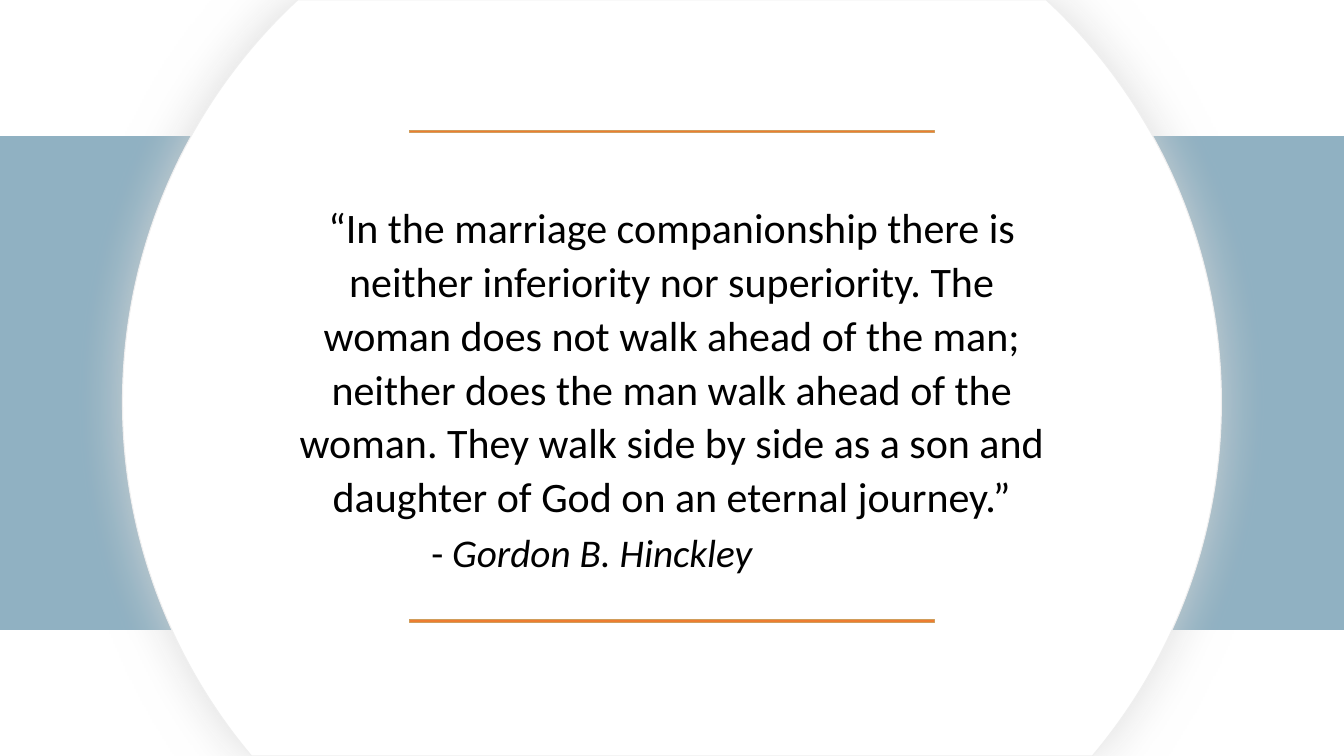
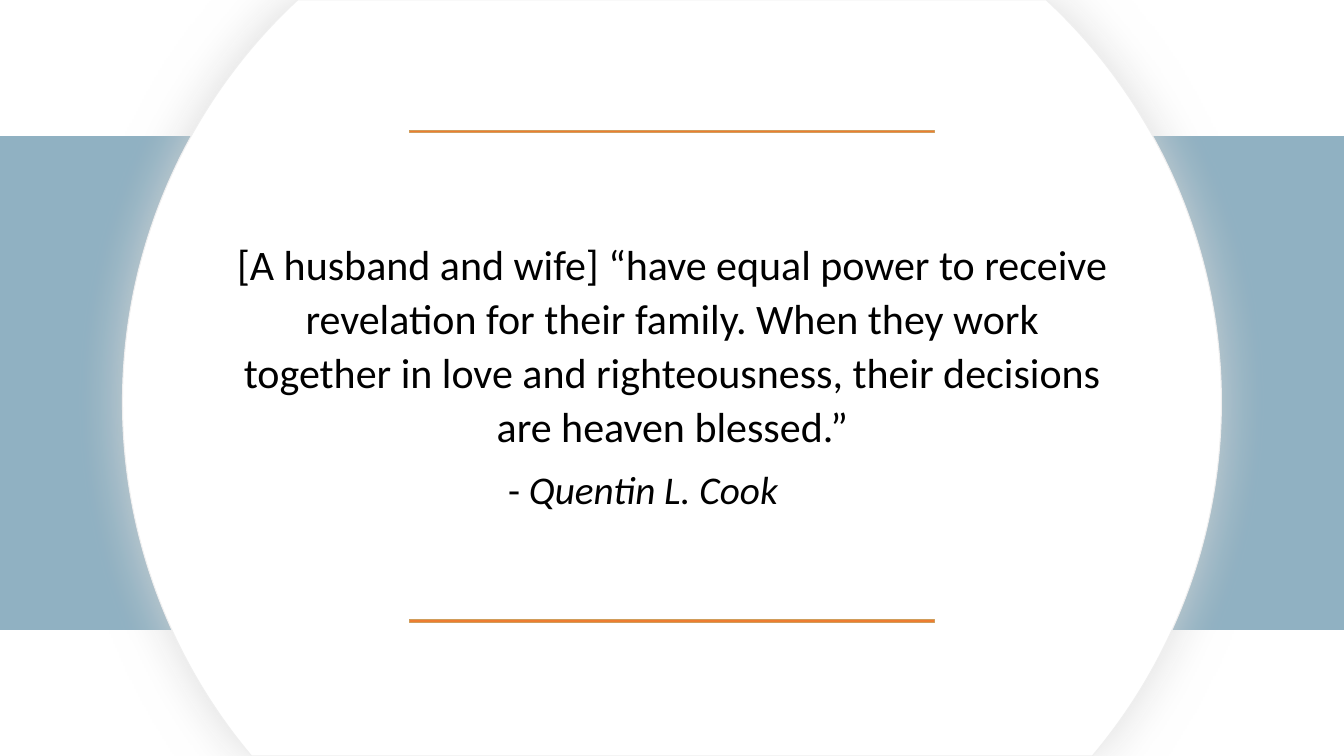
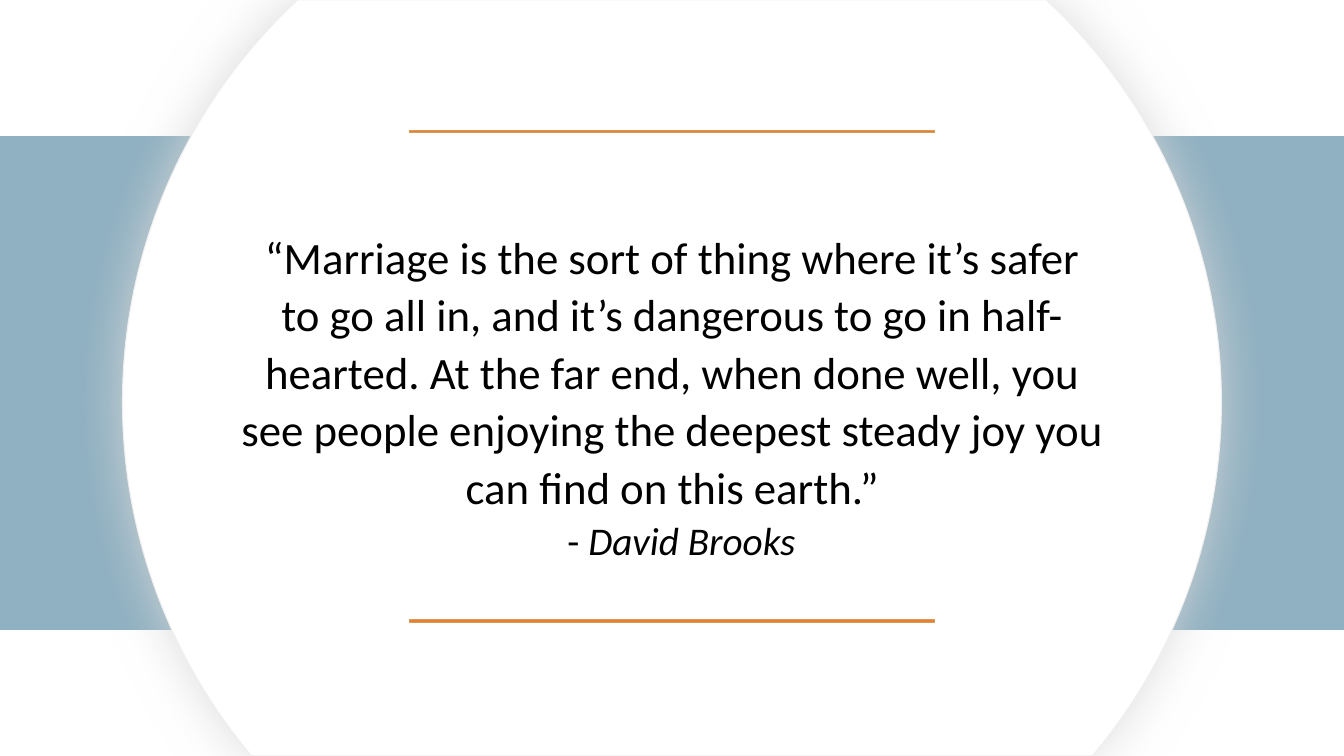
import math
from dataclasses import dataclass

import lxml.etree
import pptx
import pptx.dml.color
import pptx.enum.shapes
import pptx.enum.text
import pptx.oxml.ns
import pptx.util
from pptx.util import Inches

SLIDE_W, SLIDE_H = 13.33, 7.5
FONT = "Calibri"
BLACK, WHITE = "000000", "FFFFFF"
BAND, DISC_EDGE, DISC_SHADOW = "90B1C2", "EFEFEF", "D8D8D8"
RULE, RULE_EDGE = "ED7D31", "D09D5C"

DISC_X, DISC_Y, DISC_R = SLIDE_W / 2, 3.99, 5.45
SHADOW_BLUR_PT, SHADOW_ALPHA = 37, 89
RULE_W, RULE_H = 5.2, 2 / 72
RULE_TOPS = (1.29, 6.15)
TOP = pptx.enum.text.MSO_ANCHOR.TOP
BOTTOM = pptx.enum.text.MSO_ANCHOR.BOTTOM


@dataclass(frozen=True)
class Box:
    left: float
    top: float
    width: float
    height: float

    def lengths(self) -> tuple:
        return tuple(Inches(v) for v in (self.left, self.top, self.width, self.height))


@dataclass(frozen=True)
class Quote:
    text: str
    author: str
    box: Box
    author_box: Box
    size: int = 30
    anchor: pptx.enum.text.MSO_ANCHOR = BOTTOM
    inset_y: float = 0.05


QUOTES = (
    Quote(
        "“In the marriage companionship there is neither inferiority nor superiority. "
        "The woman does not walk ahead of the man; neither does the man walk ahead of "
        "the woman. They walk side by side as a son and daughter of God on an eternal "
        "journey.”",
        "Gordon B. Hinckley",
        Box(2.85, 1.77, 7.63, 3.45),
        Box(4.18, 5.19, 5.2, 0.57),
    ),
    Quote(
        "[A husband and wife] “have equal power to receive revelation for their family. "
        "When they work together in love and righteousness, their decisions are heaven "
        "blessed.”",
        "Quentin L. Cook",
        Box(2.21, 1.35, 8.92, 3.17),
        Box(4.94, 4.57, 4.32, 0.57),
    ),
    Quote(
        "“Marriage is the sort of thing where it’s safer to go all in, and it’s dangerous "
        "to go in half-hearted. At the far end, when done well, you see people enjoying "
        "the deepest steady joy you can find on this earth.”",
        "David Brooks",
        Box(2.29, 2.14, 8.76, 3.11),
        Box(5.53, 5.07, 4.32, 0.57),
        size=32,
        anchor=TOP,
        inset_y=0.1,
    ),
)


def rgb(color: str) -> pptx.dml.color.RGBColor:
    return pptx.dml.color.RGBColor.from_string(color)


def paint(shape, fill: str, line: str) -> None:
    shape.shadow.inherit = False
    shape.fill.solid()
    shape.fill.fore_color.rgb = rgb(fill)
    shape.line.color.rgb = rgb(line)
    shape.line.width = pptx.util.Pt(0.75)


def add_rect(s, box: Box, fill: str, line: str) -> None:
    shape = s.shapes.add_shape(pptx.enum.shapes.MSO_SHAPE.RECTANGLE, *box.lengths())
    paint(shape, fill, line)


def add_glow_shadow(shape) -> None:
    """Put a soft, centred shadow behind the shape."""
    qn = pptx.oxml.ns.qn
    effects = shape.element.spPr.find(qn("a:effectLst"))
    shadow = lxml.etree.SubElement(effects, qn("a:outerShdw"))
    shadow.set("blurRad", str(pptx.util.Pt(SHADOW_BLUR_PT)))
    shadow.set("algn", "ctr")
    shadow.set("rotWithShape", "0")
    color = lxml.etree.SubElement(shadow, qn("a:srgbClr"), val=DISC_SHADOW)
    lxml.etree.SubElement(color, qn("a:alpha"), val=str(SHADOW_ALPHA * 1000))


def disc_point(angle: float, pull: float = 0) -> tuple:
    """Point on the disc's rim in EMU, moved along the tangent by pull radii."""
    x = DISC_X + DISC_R * (math.cos(angle) - pull * math.sin(angle))
    y = DISC_Y + DISC_R * (math.sin(angle) + pull * math.cos(angle))
    return Inches(x), Inches(y)


def bend_to_arc(segment, start: float, end: float, left: int, top: int) -> None:
    """Turn a straight path segment into a curve along the disc's rim."""
    qn = pptx.oxml.ns.qn
    pull = 4 / 3 * math.tan((end - start) / 4)
    curve = lxml.etree.Element(qn("a:cubicBezTo"))
    for x, y in (disc_point(start, pull), disc_point(end, -pull), disc_point(end)):
        lxml.etree.SubElement(curve, qn("a:pt"), x=str(x - left), y=str(y - top))
    segment.getparent().replace(segment, curve)


def add_disc(s) -> None:
    """Draw the big circle, cut off at the top and bottom of the slide."""
    upper = math.asin(DISC_Y / DISC_R)
    lower = math.asin((SLIDE_H - DISC_Y) / DISC_R)
    angles = [math.pi + upper, 2 * math.pi - upper, 2 * math.pi,
              2 * math.pi + lower, 3 * math.pi - lower, 3 * math.pi, 3 * math.pi + upper]
    points = [disc_point(a) for a in angles]
    builder = s.shapes.build_freeform(*points[0])
    builder.add_line_segments(points[1:], close=True)
    disc = builder.convert_to_shape()
    segments = list(disc.element.iter(pptx.oxml.ns.qn("a:lnTo")))
    for i in (1, 2, 4, 5):
        bend_to_arc(segments[i], angles[i], angles[i + 1], disc.left, disc.top)
    paint(disc, WHITE, DISC_EDGE)
    add_glow_shadow(disc)


def add_backdrop(s) -> None:
    add_rect(s, Box(0, 1.35, SLIDE_W, 4.9), BAND, BAND)
    add_disc(s)
    for top in RULE_TOPS:
        add_rect(s, Box((SLIDE_W - RULE_W) / 2, top, RULE_W, RULE_H), RULE, RULE_EDGE)


def add_text_frame(s, box: Box):
    tf = s.shapes.add_textbox(*box.lengths()).text_frame
    tf.word_wrap = True
    return tf


def format_run(r, size: int, italic: bool = False) -> None:
    r.font.name = FONT
    r.font.size = pptx.util.Pt(size)
    r.font.color.rgb = rgb(BLACK)
    r.font.italic = italic


def add_quote(s, quote: Quote) -> None:
    tf = add_text_frame(s, quote.box)
    tf.vertical_anchor = quote.anchor
    tf.margin_top = tf.margin_bottom = Inches(quote.inset_y)
    tf.text = quote.text
    p = tf.paragraphs[0]
    p.alignment = pptx.enum.text.PP_ALIGN.CENTER
    p.line_spacing = 1.07
    format_run(p.runs[0], quote.size)


def add_author(s, quote: Quote) -> None:
    p = add_text_frame(s, quote.author_box).paragraphs[0]
    for text, italic in (("- ", False), (quote.author, True)):
        r = p.add_run()
        r.text = text
        format_run(r, 28, italic)


def main() -> None:
    prs = pptx.Presentation()
    prs.slide_width, prs.slide_height = Inches(SLIDE_W), Inches(SLIDE_H)
    blank = prs.slide_layouts[6]
    for quote in QUOTES:
        s = prs.slides.add_slide(blank)
        add_backdrop(s)
        add_quote(s, quote)
        add_author(s, quote)
    prs.save("out.pptx")


if __name__ == "__main__":
    main()
